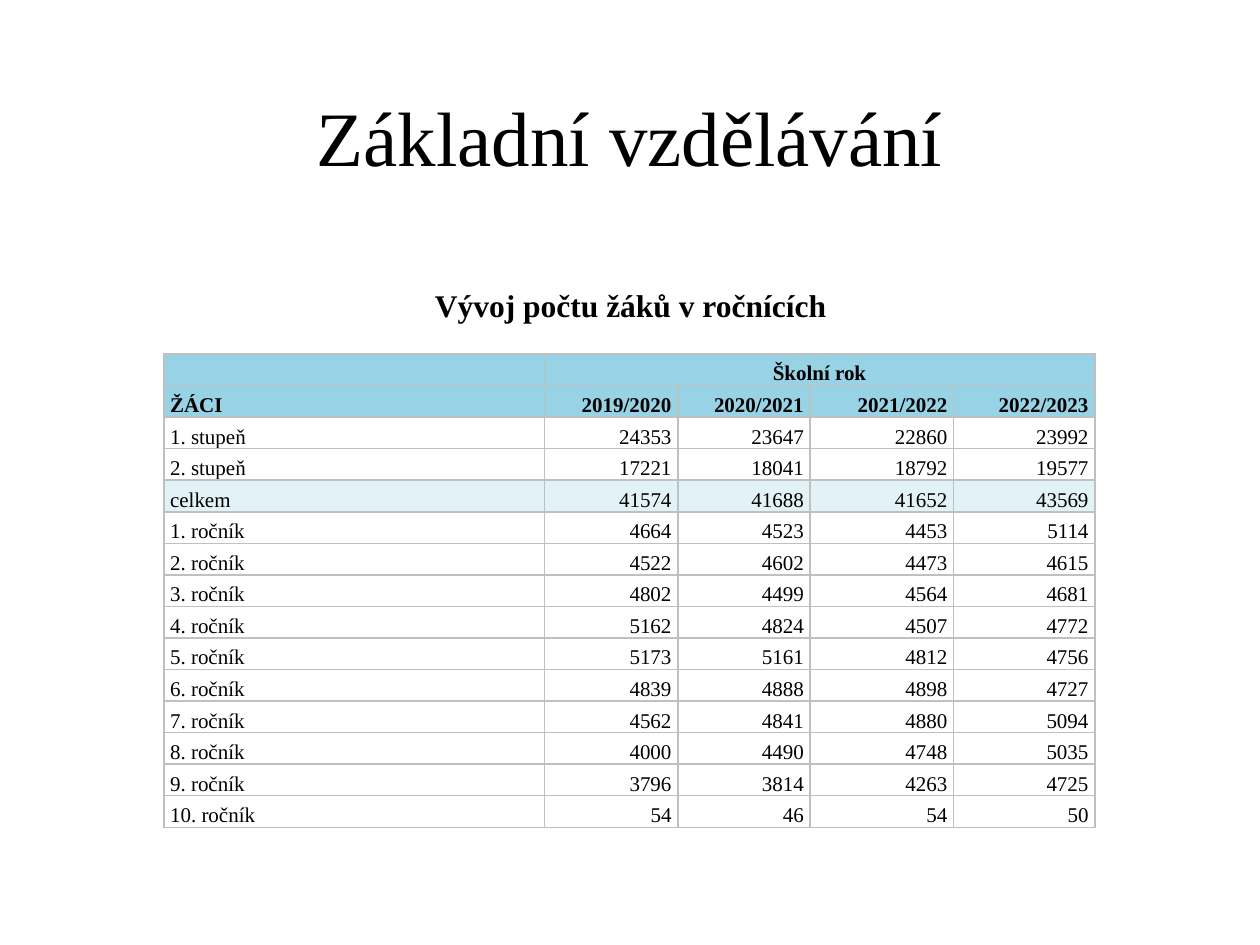
import pptx
import pptx.util
import pptx.dml.color
import pptx.enum.text
import pptx.oxml.ns
import lxml.etree

Inches, Pt = pptx.util.Inches, pptx.util.Pt
RGB = pptx.dml.color.RGBColor
ALIGN = pptx.enum.text.PP_ALIGN
ANCHOR = pptx.enum.text.MSO_ANCHOR
qn = pptx.oxml.ns.qn

# Content
TITLE = "Základní vzdělávání"
HEADING = "Vývoj počtu žáků v ročnících"
ROWS = [
    ("", "Školní rok", "", "", ""),
    ("ŽÁCI", "2019/2020", "2020/2021", "2021/2022", "2022/2023"),
    ("1. stupeň", 24353, 23647, 22860, 23992),
    ("2. stupeň", 17221, 18041, 18792, 19577),
    ("celkem", 41574, 41688, 41652, 43569),
    ("1. ročník", 4664, 4523, 4453, 5114),
    ("2. ročník", 4522, 4602, 4473, 4615),
    ("3. ročník", 4802, 4499, 4564, 4681),
    ("4. ročník", 5162, 4824, 4507, 4772),
    ("5. ročník", 5173, 5161, 4812, 4756),
    ("6. ročník", 4839, 4888, 4898, 4727),
    ("7. ročník", 4562, 4841, 4880, 5094),
    ("8. ročník", 4000, 4490, 4748, 5035),
    ("9. ročník", 3796, 3814, 4263, 4725),
    ("10. ročník", 54, 46, 54, 50),
]
HEADS = 2
WIDTHS = [3.02, 1.06, 1.05, 1.14, 1.12]
HEIGHT = 3.76
FONT = "Times New Roman"
COLORS = {"text": "000000", "head": "97D2E5", "total": "E2F3F8", "grid": "C0C0C0"}


def style(para, size, align, bold=False):
    para.alignment = align
    font = para.font
    font.name, font.size, font.bold = FONT, Pt(size), bold
    font.color.rgb = RGB.from_string(COLORS["text"])


def border(cell):
    props = cell._tc.get_or_add_tcPr()
    for side in ("a:lnL", "a:lnR", "a:lnT", "a:lnB"):
        line = lxml.etree.SubElement(props, qn(side), w=str(Pt(1)))
        fill = lxml.etree.SubElement(line, qn("a:solidFill"))
        lxml.etree.SubElement(fill, qn("a:srgbClr"), val=COLORS["grid"])


def fill_cell(cell, value, align, bold, color):
    cell.margin_left = cell.margin_right = Inches(0.05)
    cell.margin_top = cell.margin_bottom = 0
    cell.vertical_anchor = ANCHOR.BOTTOM
    cell.text = str(value)
    para = cell.text_frame.paragraphs[0]
    style(para, 12, align, bold)
    if not cell.text:  # keeps an empty cell from stretching its row
        lxml.etree.SubElement(para._p, qn("a:endParaRPr"), sz="1200")
    border(cell)
    if color:
        cell.fill.solid()
        cell.fill.fore_color.rgb = RGB.from_string(color)
    else:
        cell.fill.background()


def main():
    deck = pptx.Presentation()
    deck.slide_width, deck.slide_height = Inches(10), Inches(7.5)
    slide = deck.slides.add_slide(deck.slide_layouts[5])

    # Title
    title = slide.shapes.title
    title.left, title.top = Inches(0.69), Inches(0.4)
    title.width, title.height = Inches(8.62), Inches(1.45)
    title.text_frame.text = TITLE
    title.text_frame.vertical_anchor = ANCHOR.MIDDLE
    para = title.text_frame.paragraphs[0]
    para.line_spacing = 0.9
    style(para, 44, ALIGN.CENTER)

    # Heading above the table
    box = slide.shapes.add_textbox(Inches(1.58), Inches(2.22), Inches(6.85), Inches(0.71))
    box.text_frame.word_wrap = True
    box.text_frame.text = HEADING
    style(box.text_frame.paragraphs[0], 18, ALIGN.CENTER, True)

    # Table of pupils by grade
    frame = slide.shapes.add_table(len(ROWS), len(WIDTHS), Inches(1.3), Inches(2.81),
                                   Inches(sum(WIDTHS)), Inches(HEIGHT))
    table = frame.table
    table.horz_banding = table.first_row = False
    for col, width in zip(table.columns, WIDTHS):
        col.width = Inches(width)
    for r, row in enumerate(ROWS):
        table.rows[r].height = Inches(HEIGHT / len(ROWS))
        head = r < HEADS
        color = COLORS["head"] if head else COLORS["total"] if row[0] == "celkem" else None
        for c, value in enumerate(row):
            align = ALIGN.LEFT if c == 0 else ALIGN.CENTER if r == 0 else ALIGN.RIGHT
            fill_cell(table.cell(r, c), value, align, head, color)
    table.cell(0, 1).merge(table.cell(0, len(WIDTHS) - 1))

    deck.save("out.pptx")


if __name__ == "__main__":
    main()
